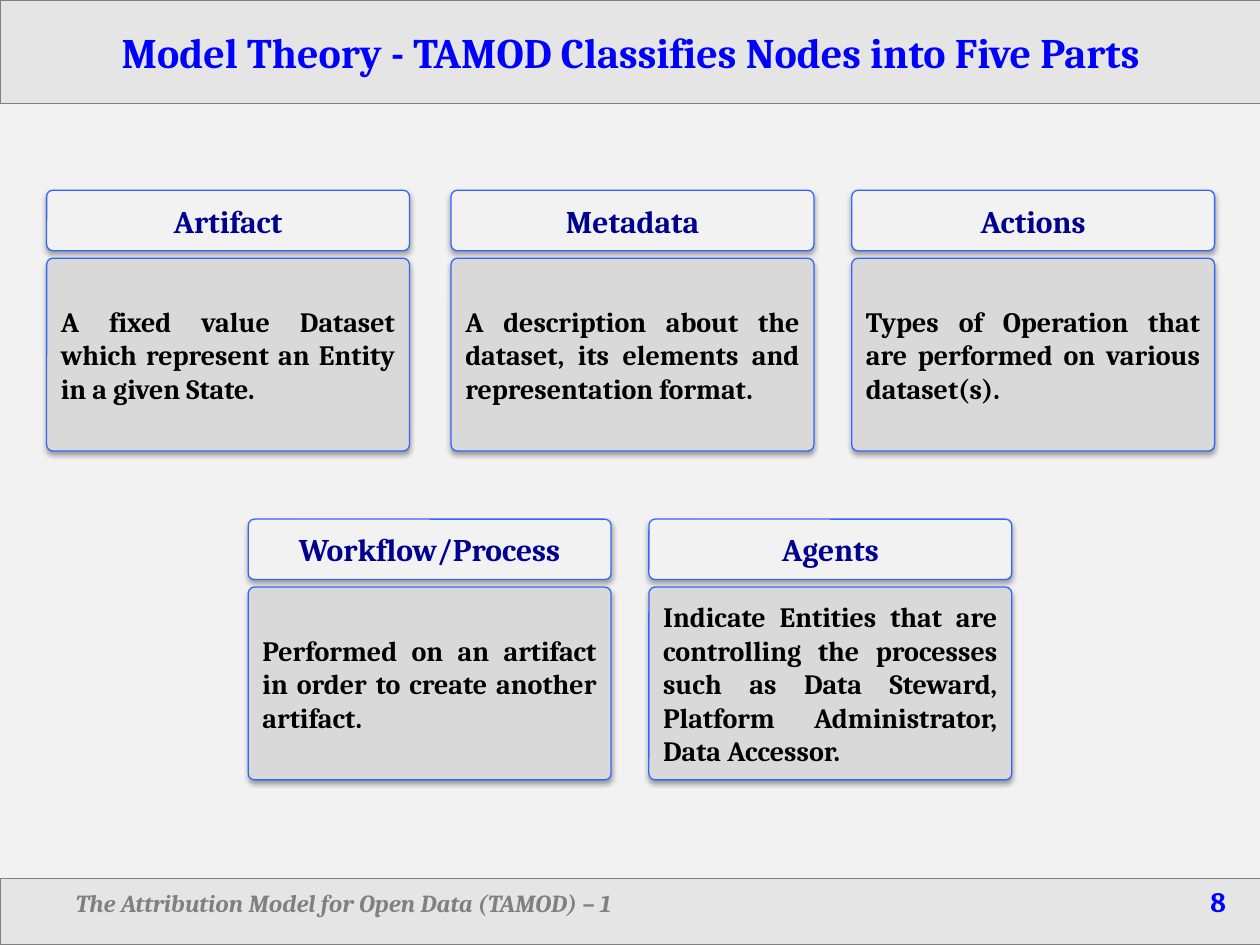
from lxml.etree import SubElement
from pptx import Presentation
from pptx.dml.color import RGBColor
from pptx.enum.shapes import MSO_SHAPE
from pptx.enum.text import MSO_ANCHOR, PP_ALIGN
from pptx.oxml.ns import qn
from pptx.util import Inches, Pt

BACKGROUND = RGBColor(0xF2, 0xF2, 0xF2)
PANEL = RGBColor(0xD9, 0xD9, 0xD9)
GRAY = RGBColor(0x80, 0x80, 0x80)
BORDER_BLUE = RGBColor(0x33, 0x66, 0xFF)
BRIGHT_BLUE = RGBColor(0x00, 0x00, 0xFF)
NAVY = RGBColor(0x00, 0x00, 0x90)
BLACK = RGBColor(0x00, 0x00, 0x00)

BAR_WIDTH = 10.01
CARD_WIDTH = 2.88
HEADING_HEIGHT = 0.48
BODY_OFFSET = 0.54
BODY_HEIGHT = 1.53
CORNER_RADIUS = 0.05

CARD_ROWS = [
    (1.51, [
        (0.37, "Artifact",
         "A fixed value Dataset which represent an Entity in a given State."),
        (3.58, "Metadata",
         "A description about the dataset, its elements and representation format."),
        (6.76, "Actions",
         "Types of Operation that are performed on various dataset(s)."),
    ]),
    (4.12, [
        (1.97, "Workflow/Process",
         "Performed on an artifact in order to create another artifact."),
        (5.15, "Agents",
         "Indicate Entities that are controlling the processes such as "
         "Data Steward, Platform Administrator, Data Accessor."),
    ]),
]


def format_run(run, size, color, italic=False):
    """Apply the bold slide typeface to a run."""
    run.font.name = "Cambria"
    run.font.size = Pt(size)
    run.font.bold = True
    run.font.italic = italic
    run.font.color.rgb = color


def add_box(slide, kind, left, top, width, height, fill, border):
    """Add a filled, thinly outlined shape without a shadow."""
    shape = slide.shapes.add_shape(
        kind, Inches(left), Inches(top), Inches(width), Inches(height))
    shape.fill.solid()
    shape.fill.fore_color.rgb = fill
    shape.line.color.rgb = border
    shape.line.width = Pt(0.75)
    shape.shadow.inherit = False
    shape.text_frame.word_wrap = True
    return shape


def add_bar(slide, top, height):
    """Add a half-transparent bar across the slide."""
    bar = add_box(slide, MSO_SHAPE.RECTANGLE, 0, top, BAR_WIDTH, height, PANEL, GRAY)
    color = bar._element.spPr.find(qn("a:solidFill")).find(qn("a:srgbClr"))
    SubElement(color, qn("a:alpha"), val="50000")
    return bar


def add_title_bar(slide, top, height, text):
    """Add the title bar with its centred heading."""
    frame = add_bar(slide, top, height).text_frame
    frame.vertical_anchor = MSO_ANCHOR.MIDDLE
    frame.text = text
    paragraph = frame.paragraphs[0]
    paragraph.alignment = PP_ALIGN.CENTER
    format_run(paragraph.runs[0], 24, BRIGHT_BLUE)


def add_footer_bar(slide, top, height, text, number):
    """Add the footer bar with its caption and right-aligned page number."""
    frame = add_bar(slide, top, height).text_frame
    frame.vertical_anchor = MSO_ANCHOR.TOP
    frame.margin_left = Inches(0.6)
    frame.text = f"{text}\t"
    paragraph = frame.paragraphs[0]
    paragraph.alignment = PP_ALIGN.LEFT
    tabs = SubElement(paragraph._p.get_or_add_pPr(), qn("a:tabLst"))
    SubElement(tabs, qn("a:tab"), pos=str(Inches(9.13)), algn="r")
    format_run(paragraph.runs[0], 14, GRAY, italic=True)
    number_run = paragraph.add_run()
    number_run.text = number
    format_run(number_run, 16, BRIGHT_BLUE)


def add_card_part(slide, left, top, height, fill, text, size, color, alignment):
    """Add one rounded, shadowed box of a card."""
    shape = add_box(slide, MSO_SHAPE.ROUNDED_RECTANGLE,
                    left, top, CARD_WIDTH, height, fill, BORDER_BLUE)
    shape.adjustments[0] = CORNER_RADIUS / height
    effects = shape._element.spPr.find(qn("a:effectLst"))
    shadow = SubElement(effects, qn("a:outerShdw"), blurRad=str(Pt(3.1)),
                        dist=str(Pt(1.8)), dir="5400000", rotWithShape="0")
    shadow_color = SubElement(shadow, qn("a:srgbClr"), val=str(BLACK))
    SubElement(shadow_color, qn("a:alpha"), val="35000")
    shape.text_frame.vertical_anchor = MSO_ANCHOR.MIDDLE
    shape.text_frame.text = text
    paragraph = shape.text_frame.paragraphs[0]
    paragraph.alignment = alignment
    format_run(paragraph.runs[0], size, color)


def add_card(slide, left, top, heading, description):
    """Add a heading box with its description box below."""
    add_card_part(slide, left, top, HEADING_HEIGHT, BACKGROUND,
                  heading, 18, NAVY, PP_ALIGN.CENTER)
    add_card_part(slide, left, top + BODY_OFFSET, BODY_HEIGHT, PANEL,
                  description, 16, BLACK, PP_ALIGN.JUSTIFY)


def main():
    """Build and save the slide."""
    presentation = Presentation()
    presentation.slide_width = Inches(10)
    presentation.slide_height = Inches(7.5)
    slide = presentation.slides.add_slide(presentation.slide_layouts[6])
    slide.background.fill.solid()
    slide.background.fill.fore_color.rgb = BACKGROUND

    add_title_bar(slide, 0, 0.82, "Model Theory - TAMOD Classifies Nodes into Five Parts")
    for top, cards in CARD_ROWS:
        for left, heading, description in cards:
            add_card(slide, left, top, heading, description)
    add_footer_bar(slide, 6.97, 0.53, "The Attribution Model for Open Data (TAMOD) – 1", "8")
    presentation.save("out.pptx")


if __name__ == "__main__":
    main()
